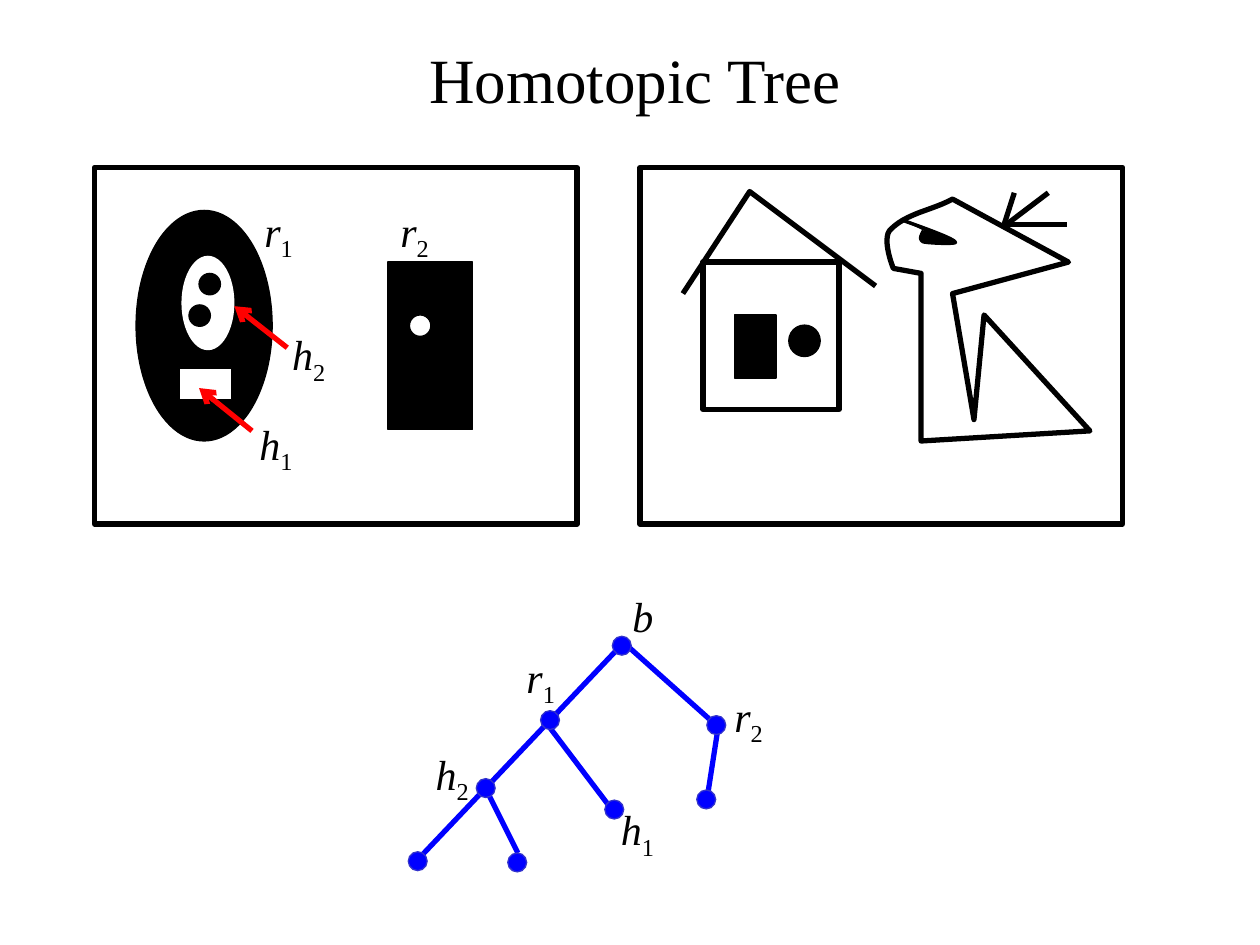
import pptx
import pptx.util
import pptx.dml.color
import pptx.enum.shapes
import pptx.enum.text
import lxml.etree

# Theme: colours, type and line widths in points
THEME = {
    "ink": "000000", "paper": "FFFFFF", "arrow": "FF0000",
    "tree": "0000FF", "rim": "3333CC",
    "font": "Times New Roman", "title": 36, "label": 24,
    "thick": 3, "mid": 2, "thin": 0.75,
}

# Content: all places are in inches
SIZE = (10, 7.5)
TITLE = ("Homotopic Tree", (0.64, 0.19, 8.8, 0.86))

# Solids: kind, box, fill, line colour, line width
HOUSE = [
    ("box", (5.08, 1.33, 3.83, 2.83), None, "ink", "thick"),
    ("box", (5.58, 2.08, 1.08, 1.17), "paper", "ink", "thick"),
    ("box", (5.83, 2.5, 0.33, 0.5), "ink", "ink", "thin"),
    ("oval", (6.26, 2.58, 0.25, 0.25), "ink", "ink", "thin"),
]
BLOBS = [
    ("box", (0.75, 1.33, 3.83, 2.83), None, "ink", "thick"),
    ("oval", (1.08, 1.67, 1.08, 1.83), "ink", "ink", "thin"),
    ("oval", (1.44, 2.03, 0.42, 0.75), "paper", None, None),
    ("oval", (1.58, 2.17, 0.17, 0.17), "ink", "ink", "thin"),
    ("oval", (1.5, 2.42, 0.17, 0.17), "ink", "ink", "thin"),
    ("box", (1.42, 2.92, 0.42, 0.25), "paper", "ink", "thin"),
    ("box", (3.08, 2.08, 0.67, 1.33), "ink", "ink", "thin"),
    ("oval", (3.25, 2.5, 0.17, 0.17), "paper", "ink", "thin"),
]

# Outlines: a step of one point is straight, a step of three is a curve
ROOF = [(5.42, 2.33), [(5.95, 1.52)], [(6.95, 2.27)]]
BIRD = [
    (7.31, 2.17), [(7.31, 3.5)], [(8.65, 3.42)], [(7.81, 2.5)],
    [(7.73, 3.33)], [(7.56, 2.33)], [(8.48, 2.08)], [(7.56, 1.58)],
    [(7.4, 1.67), (7.19, 1.69), (7.06, 1.83)],
    [(7, 1.91), (7.09, 2.13), (7.09, 2.13)],
]
EYE = [
    (7.17, 1.75),
    [(7.36, 1.82), (7.56, 1.89), (7.58, 1.92)],
    [(7.61, 1.94), (7.38, 1.93), (7.33, 1.92)],
    [(7.29, 1.9), (7.31, 1.87), (7.33, 1.83)],
]
CREST = [((7.97, 1.78), (8.05, 1.53)), ((7.97, 1.78), (8.47, 1.78)),
         ((7.99, 1.78), (8.32, 1.53))]
ARROWS = [((2, 3.42), (1.58, 3.08)), ((2.28, 2.76), (1.86, 2.43))]

# Tree
EDGES = [((3.28, 6.86), (4.95, 5.1)), ((4.95, 5.1), (5.7, 5.77)),
         ((4.36, 5.77), (4.86, 6.43)), ((3.86, 6.27), (4.11, 6.77)),
         ((5.7, 5.77), (5.61, 6.35))]
NODES = [(4.29, 5.64), (4.86, 5.05), (4.8, 6.35), (4.03, 6.77),
         (3.24, 6.76), (3.78, 6.18), (5.61, 5.68), (5.53, 6.27)]
DOT = 0.15

# Labels: letter, subscript, left, top, width
LABELS = [
    ("r", "1", 2, 1.58, 0.5), ("r", "2", 3.08, 1.58, 0.5),
    ("h", "1", 1.96, 3.27, 0.83), ("h", "2", 2.22, 2.56, 0.83),
    ("b", "", 4.92, 4.64, 0.38), ("r", "1", 4.08, 5.12, 0.55),
    ("r", "2", 5.73, 5.43, 0.55), ("h", "2", 3.36, 5.89, 0.55),
    ("h", "1", 4.83, 6.33, 0.55),
]
TALL = 0.5

KINDS = {"box": pptx.enum.shapes.MSO_SHAPE.RECTANGLE,
         "oval": pptx.enum.shapes.MSO_SHAPE.OVAL}

deck = pptx.Presentation()
deck.slide_width, deck.slide_height = (pptx.util.Cm(v * 2.54) for v in SIZE)
parts = deck.slides.add_slide(deck.slide_layouts[6]).shapes


def place(vals):
    return [pptx.util.Cm(v * 2.54) for v in vals]


def hue(name):
    return pptx.dml.color.RGBColor.from_string(THEME[name])


def paint(fill, name):
    if name:
        fill.solid()
        fill.fore_color.rgb = hue(name)
    else:
        fill.background()


def stroke(line, name, width):
    paint(line.fill, name)
    if name:
        line.width = pptx.util.Pt(THEME[width])


def dress(shape, fill, name, width):
    shape.shadow.inherit = False
    paint(shape.fill, fill)
    stroke(shape.line, name, width)


def solid(kind, box, *look):
    dress(parts.add_shape(KINDS[kind], *place(box)), *look)


def trace(start, *steps):
    """Turn straight and curved steps into a list of points."""
    dots = [start]
    for step in steps:
        if len(step) == 1:
            dots += step
            continue
        ctrl = [dots[-1], *step]
        for n in range(1, 13):
            t = n / 12
            rate = ((1 - t)**3, 3 * t * (1 - t)**2, 3 * t * t * (1 - t), t**3)
            dots.append(tuple(sum(r * c[i] for r, c in zip(rate, ctrl))
                              for i in (0, 1)))
    return dots


def outline(shape, close, *look):
    first, *rest = [place(dot) for dot in trace(*shape)]
    form = parts.build_freeform(*first)
    form.add_line_segments(rest, close=close)
    dress(form.convert_to_shape(), *look)


def link(ends, name, tip=False):
    line = parts.add_connector(pptx.enum.shapes.MSO_CONNECTOR.STRAIGHT,
                               *place(ends[0] + ends[1]))
    stroke(line.line, name, "thick")
    props = line._element.spPr
    space = "{" + props.nsmap["a"] + "}"
    if tip:
        lxml.etree.SubElement(line.line._get_or_add_ln(), space + "tailEnd",
                              type="arrow")
    lxml.etree.SubElement(props, space + "effectLst")


def write(box, runs, frame=(), align=None):
    """Add text; each run is its words, its format and its baseline."""
    text = parts.add_textbox(*place(box)).text_frame
    for key, val in {"word_wrap": True, **dict(frame)}.items():
        setattr(text, key, val)
    para = text.paragraphs[0]
    para.alignment = align
    for words, form, base in runs:
        run = para.add_run()
        run.text = words
        for key, val in {"name": THEME["font"], **form}.items():
            setattr(run.font, key, val)
        run.font.color.rgb = hue("ink")
        if base:
            run._r.get_or_add_rPr().set("baseline", str(base))


# Title
write(TITLE[1], [(TITLE[0], {"size": pptx.util.Pt(THEME["title"])}, 0)],
      {"vertical_anchor": pptx.enum.text.MSO_ANCHOR.MIDDLE},
      pptx.enum.text.PP_ALIGN.CENTER)

# Right panel: house and bird
for item in HOUSE:
    solid(*item)
outline(ROOF, False, None, "ink", "thick")
outline(BIRD, True, "paper", "ink", "thick")
for ends in CREST:
    link(ends, "ink")
outline(EYE, False, "ink", "ink", "mid")

# Left panel: regions and holes
for item in BLOBS:
    solid(*item)
for ends in ARROWS:
    link(ends, "arrow", True)

# Tree
for ends in EDGES:
    link(ends, "tree")
for node in NODES:
    solid("oval", (*node, DOT, DOT), "tree", "rim", "thin")

# Labels
size = pptx.util.Pt(THEME["label"])
for name, sub, left, top, wide in LABELS:
    runs = [(name, {"size": size, "italic": True}, 0)]
    if sub:
        runs.append((sub, {"size": size, "italic": False}, -25000))
    write((left, top, wide, TALL), runs)

deck.save("out.pptx")
